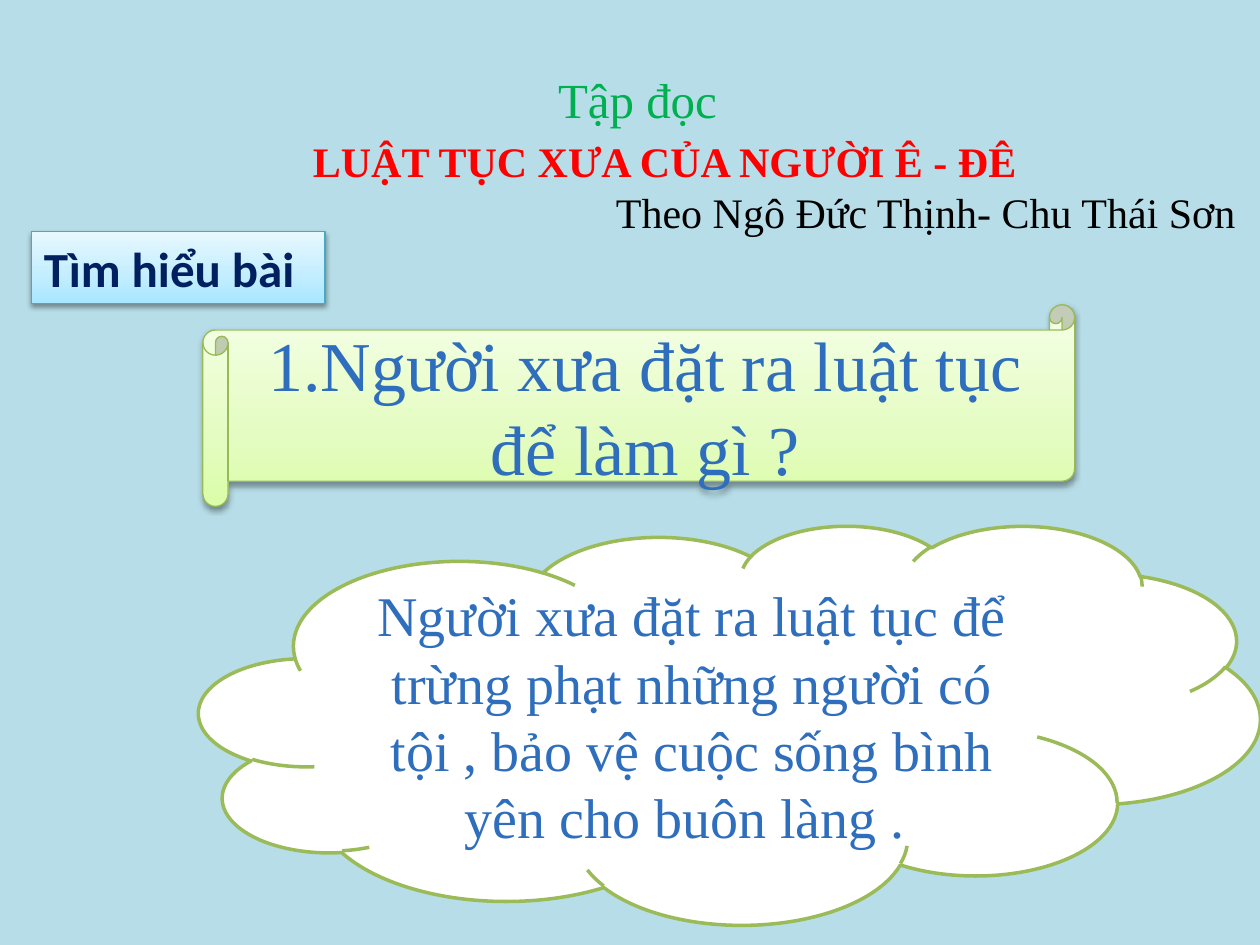
from copy import deepcopy

from lxml.etree import SubElement
from pptx import Presentation
from pptx.dml.color import RGBColor
from pptx.enum.shapes import MSO_SHAPE
from pptx.enum.text import MSO_ANCHOR, PP_ALIGN
from pptx.oxml.ns import qn
from pptx.util import Pt

SERIF = "Times New Roman"


def color(value):
    return RGBColor.from_string(value)


def write(paragraph, text, size, text_color, align=PP_ALIGN.LEFT, bold=False, font=SERIF):
    paragraph.text = text
    paragraph.alignment = align
    paragraph.font.name = font
    paragraph.font.size = Pt(size)
    paragraph.font.bold = bold
    paragraph.font.color.rgb = color(text_color)


presentation = Presentation()
presentation.slide_width, presentation.slide_height = Pt(720), Pt(540)
slide = presentation.slides.add_slide(presentation.slide_layouts[5])
slide.background.fill.solid()
slide.background.fill.fore_color.rgb = color("B7DEE8")

# Lesson heading
title = slide.shapes.title
title.left, title.top, title.width, title.height = Pt(80.6), Pt(36), Pt(567.4), Pt(75)
frame = title.text_frame
frame.word_wrap = True
frame.vertical_anchor = MSO_ANCHOR.TOP
write(frame.paragraphs[0], "Tập đọc", 28, "00B050", PP_ALIGN.CENTER)
lesson = frame.add_paragraph()
write(lesson, "LUẬT TỤC XƯA CỦA NGƯỜI Ê - ĐÊ", 24, "FF0000", bold=True)
lesson.space_before = Pt(4)
lesson._p.get_or_add_pPr().set("marL", str(Pt(91)))

# Answer cloud
cloud = slide.shapes.add_shape(MSO_SHAPE.CLOUD, Pt(113.8), Pt(300), Pt(606.2), Pt(228))
cloud.shadow.inherit = False
cloud.fill.solid()
cloud.fill.fore_color.rgb = color("FFFFFF")
cloud.line.color.rgb = color("9BBB59")
cloud.line.width = Pt(2)
cloud.text_frame.vertical_anchor = MSO_ANCHOR.MIDDLE
write(cloud.text_frame.paragraphs[0],
      "Người xưa đặt ra luật tục để trừng phạt những người có tội , "
      "bảo vệ cuộc sống bình yên cho buôn làng . ",
      32, "2E6EBC", PP_ALIGN.CENTER)

# Question scroll and section label: gradient from the bottom up, soft shadow
scroll = slide.shapes.add_shape(MSO_SHAPE.HORIZONTAL_SCROLL,
                                Pt(115.9), Pt(174.2), Pt(498.2), Pt(115.2))
scroll.text_frame.vertical_anchor = MSO_ANCHOR.MIDDLE
write(scroll.text_frame.paragraphs[0], "1.Người xưa đặt ra luật tục để làm gì ?",
      40, "2E6EBC", PP_ALIGN.CENTER)

label = slide.shapes.add_shape(MSO_SHAPE.RECTANGLE, Pt(18), Pt(132.5), Pt(167.8), Pt(41))
label.text_frame.vertical_anchor = MSO_ANCHOR.TOP
write(label.text_frame.paragraphs[0], "Tìm hiểu bài", 28, "002060", bold=True, font="Calibri")

for shape, line_color, stop_colors in (
    (scroll, "98B955", ("DAFDA7", "E4FCC2", "F5FFE7")),
    (label, "46AAC5", ("A7E6FF", "C1EDFF", "E7F8FF")),
):
    shape.line.color.rgb = color(line_color)
    shape.line.width = Pt(0.75)
    shape.fill.gradient()
    shape.fill.gradient_angle = 90
    stop_list = shape._element.spPr.find(".//" + qn("a:gsLst"))
    stop_list.insert(1, deepcopy(stop_list[0]))
    for stop, position, stop_color in zip(shape.fill.gradient_stops, (0, 0.35, 1), stop_colors):
        stop.position = position
        stop.color.rgb = color(stop_color)

    shape.shadow.inherit = False
    effects = shape._element.spPr.find(qn("a:effectLst"))
    shadow = SubElement(effects, qn("a:outerShdw"), blurRad=str(Pt(3.1)),
                        dist=str(Pt(1.6)), dir="5400000", rotWithShape="0")
    shadow_color = SubElement(shadow, qn("a:srgbClr"), val="000000")
    SubElement(shadow_color, qn("a:alpha"), val="38000")

# Authors
authors = slide.shapes.add_textbox(Pt(344.9), Pt(103), Pt(372.2), Pt(36))
authors.text_frame.word_wrap = False
write(authors.text_frame.paragraphs[0], "Theo Ngô Đức Thịnh- Chu Thái Sơn", 24, "000000")

presentation.save("out.pptx")
